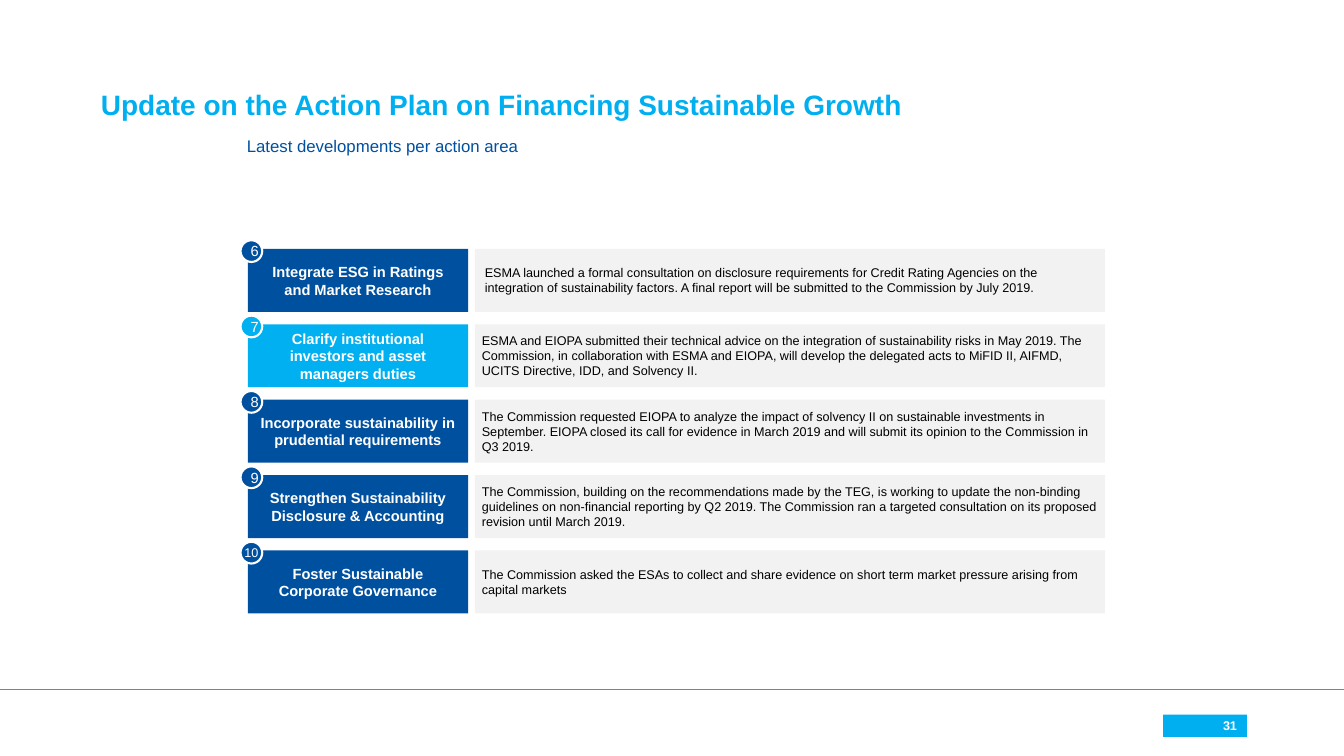
from pptx import Presentation
from pptx.dml.color import RGBColor
from pptx.enum.shapes import MSO_CONNECTOR, MSO_SHAPE
from pptx.enum.text import MSO_ANCHOR as Anchor, PP_ALIGN as Align
from pptx.oxml.ns import qn
from pptx.util import Pt
from lxml.etree import SubElement

NAVY, SKY, CYAN = "0050A0", "00AFF0", "00B0F0"
WHITE, BLACK, PALE = "FFFFFF", "000000", "F2F2F2"

ACTION_AREAS = [
    ("6", "Integrate ESG in Ratings and Market Research", NAVY, 7.2,
     "ESMA launched a formal consultation on disclosure requirements for Credit Rating Agencies "
     "on the integration of sustainability factors. A final report will be submitted to the "
     "Commission by July 2019."),
    ("7", "Clarify institutional investors and asset managers duties", CYAN, 5,
     "ESMA and EIOPA submitted their technical advice on the integration of sustainability risks "
     "in May 2019. The Commission, in collaboration with ESMA and EIOPA, will develop the "
     "delegated acts to MiFID II, AIFMD, UCITS Directive, IDD, and Solvency II."),
    ("8", "Incorporate sustainability in prudential requirements", NAVY, 5,
     "The Commission requested EIOPA to analyze the impact of solvency II on sustainable "
     "investments in September. EIOPA closed its call for evidence in March 2019 and will submit "
     "its opinion to the Commission in Q3 2019."),
    ("9", "Strengthen Sustainability Disclosure & Accounting", NAVY, 5,
     "The Commission, building on the recommendations made by the TEG, is working to update the "
     "non-binding guidelines on non-financial reporting by Q2 2019. The Commission ran a targeted "
     "consultation on its proposed revision until March 2019."),
    ("10", "Foster Sustainable Corporate Governance", NAVY, 5,
     "The Commission asked the ESAs to collect and share evidence on short term market pressure "
     "arising from capital markets"),
]


def color(hex_string):
    return RGBColor.from_string(hex_string)


class SlideBuilder:
    font_name = "Arial"

    def __init__(self, slide):
        self.slide = slide

    def set_text(self, shape, text, size, ink, bold=False, align=Align.LEFT,
                 anchor=Anchor.MIDDLE, inset=(7.2, 3.6), spacing=1.0):
        frame = shape.text_frame
        frame.word_wrap = True
        frame.vertical_anchor = anchor
        frame.margin_left = frame.margin_right = Pt(inset[0])
        frame.margin_top = frame.margin_bottom = Pt(inset[1])
        paragraph = frame.paragraphs[0]
        paragraph.alignment = align
        paragraph.line_spacing = spacing
        paragraph.space_before = Pt(0)
        run = paragraph.add_run()
        run.text = text
        run.font.name = self.font_name
        run.font.size = Pt(size)
        run.font.bold = bold
        run.font.color.rgb = color(ink)

    def title(self, text, box):
        heading = self.slide.shapes.title
        heading.left, heading.top, heading.width, heading.height = map(Pt, box)
        self.set_text(heading, text, 20, SKY, bold=True, anchor=Anchor.BOTTOM, spacing=0.9)

    def text(self, text, box, size, ink):
        label = self.slide.shapes.add_textbox(*map(Pt, box))
        self.set_text(label, text, size, ink, anchor=Anchor.TOP, spacing=0.9)

    def shape(self, kind, box, fill, text, size, ink, outline=None, **style):
        panel = self.slide.shapes.add_shape(kind, *map(Pt, box))
        panel.shadow.inherit = False
        panel.fill.solid()
        panel.fill.fore_color.rgb = color(fill)
        if outline:
            panel.line.color.rgb = color(outline)
            panel.line.width = Pt(1.5)
        else:
            panel.line.fill.background()
        self.set_text(panel, text, size, ink, **style)

    def rule(self, start, end, ink, width):
        rule = self.slide.shapes.add_connector(MSO_CONNECTOR.STRAIGHT, *map(Pt, start + end))
        rule.line.color.rgb = color(ink)
        rule.line.width = Pt(width)
        SubElement(rule._element.spPr, qn("a:effectLst"))


def main():
    deck = Presentation()
    deck.slide_width, deck.slide_height = Pt(960), Pt(540)
    page = SlideBuilder(deck.slides.add_slide(deck.slide_layouts[5]))

    page.rule((0, 492.5), (960, 492.5), SKY, 0.5)
    page.shape(MSO_SHAPE.RECTANGLE, (830.9, 510.5, 59.8, 15.8), SKY, "31", 9, WHITE,
               bold=True, align=Align.RIGHT)
    page.title("Update on the Action Plan on Financing Sustainable Growth",
               (64.8, 51.1, 825.1, 39.6))
    page.text("Latest developments per action area", (169.2, 95, 619.2, 33.1), 12, NAVY)

    first_top, pitch, row_height = 177.8, 53.85, 45
    for index, (number, area, fill, inset, progress) in enumerate(ACTION_AREAS):
        top = first_top + index * pitch
        page.shape(MSO_SHAPE.RECTANGLE, (339.2, top, 450, row_height), PALE, progress, 9, BLACK,
                   inset=(inset, 3))
        page.shape(MSO_SHAPE.RECTANGLE, (177, top, 157.5, row_height), fill, area, 10.5, WHITE,
                   bold=True, align=Align.CENTER)
        two_digits = len(number) > 1
        page.shape(MSO_SHAPE.OVAL, (171.8, top - 6.2, 15.5, 15.5), fill, number,
                   9 if two_digits else 10.5, WHITE, outline=WHITE, align=Align.CENTER,
                   inset=(0, 0) if two_digits else (5, 3))

    deck.save("out.pptx")


if __name__ == "__main__":
    main()
